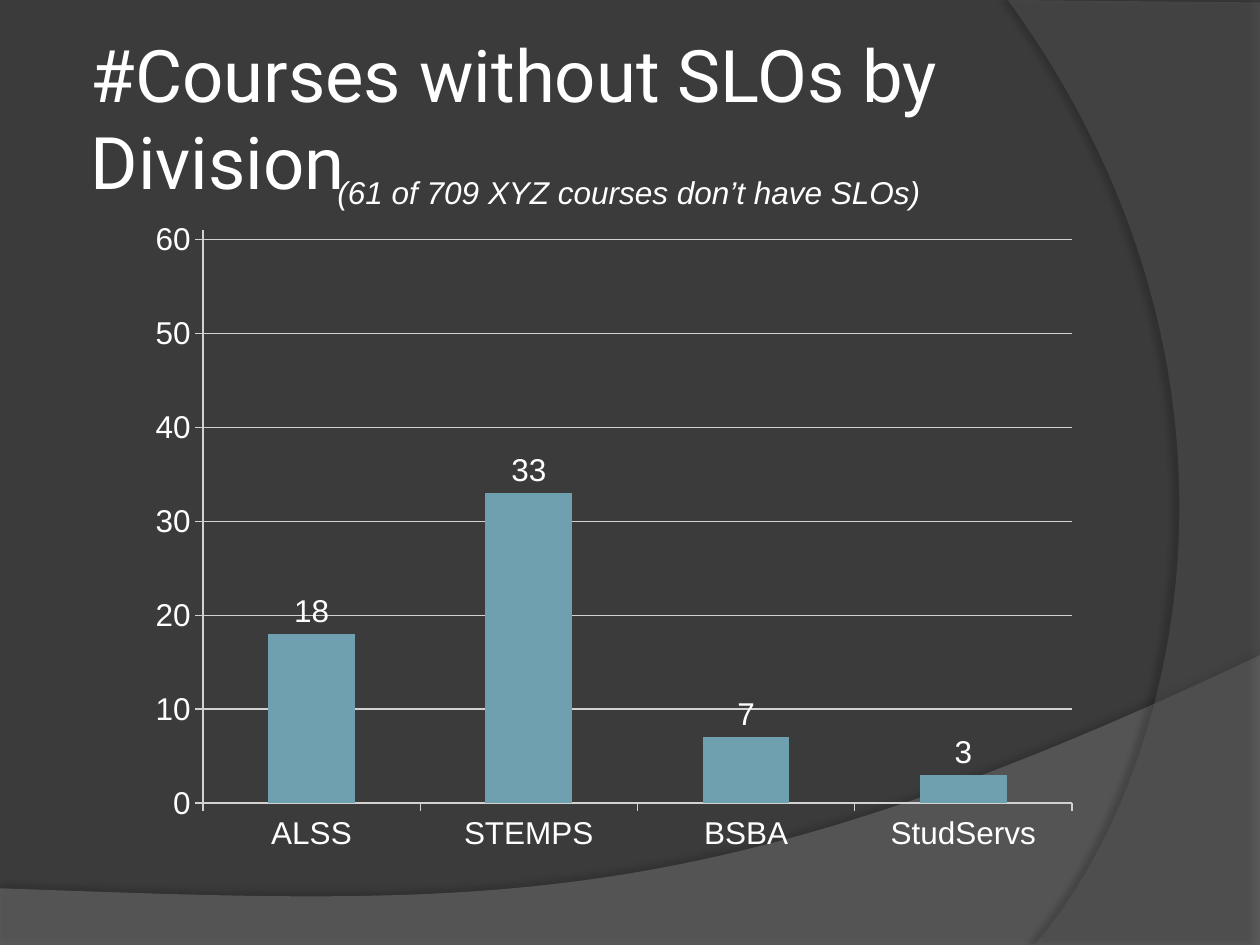
from lxml import etree
from pptx import Presentation
from pptx import util as u
from pptx.chart import data as chart_data
from pptx.dml.color import RGBColor
from pptx.enum import chart as charts, text
from pptx.oxml.ns import qn

WIDTH, HEIGHT = 10, 7.5
WHITE, LINE_GREY, TEAL = "FFFFFF", "D2D2D2", "6EA0B0"


def colour(code):
    return RGBColor.from_string(code)


def share_box(left, top, width, height):
    """Turn shares of the slide's size into a box of lengths."""
    return (u.Inches(left * WIDTH), u.Inches(top * HEIGHT),
            u.Inches(width * WIDTH), u.Inches(height * HEIGHT))


def set_values(target, values):
    for name, value in values.items():
        setattr(target, name, value)


def set_font(font, values, code=WHITE):
    set_values(font, values)
    font.color.rgb = colour(code)


def child(parent, tag, **values):
    return etree.SubElement(parent, qn(tag), values)


def bezier(points, steps=60):
    """Sample a cubic curve, leaving out its first point."""
    for step in range(1, steps + 1):
        t = step / steps
        weights = ((1 - t) ** 3, 3 * t * (1 - t) ** 2, 3 * t * t * (1 - t), t ** 3)
        yield tuple(sum(w * p[axis] for w, p in zip(weights, points)) for axis in (0, 1))


def add_swoosh(page, corners, curve, fill, opacity, shadow):
    """Draw a translucent band: straight corners, then one curved side."""
    outline = [*corners, *bezier([corners[-1], *curve])]
    (start, *rest) = [(u.Inches(x), u.Inches(y)) for x, y in outline]
    builder = page.shapes.build_freeform(*start, scale=1.0)
    builder.add_line_segments(rest, close=True)
    band = builder.convert_to_shape()
    band.fill.solid()
    band.fill.fore_color.rgb = colour(fill)
    band.line.fill.background()
    props = band.fill._xPr
    child(props.find(".//" + qn("a:srgbClr")), "a:alpha", val=str(opacity * 1000))
    # Soft shadow along the curved edge
    strength, blur, distance, angle = shadow
    effects = child(props, "a:effectLst")
    outer = child(effects, "a:outerShdw", blurRad=str(u.Pt(blur)), dist=str(u.Pt(distance)),
                  dir=str(angle * 60000), algn="ctr", rotWithShape="0")
    black = child(outer, "a:srgbClr", val="000000")
    child(black, "a:alpha", val=str(strength * 1000))


def add_background(page):
    page.background.fill.solid()
    page.background.fill.fore_color.rgb = colour("3B3B3B")
    add_swoosh(page, [(0, 7.05), (0, 7.51), (10, 7.51), (10, 5.2)],
               [(5.59, 7.29), (3.91, 7.19), (0, 7.05)], "7F7F7F", 45, (35, 4, 3.5, 270))
    add_swoosh(page, [(10, 0.02), (10, 7.5), (8.21, 7.5)],
               [(9.35, 6.19), (10.18, 3), (8, 0)], "5E5E5E", 40, (45, 4, 4, 180))


def add_text(page, box, words, font, frame):
    area = page.shapes.add_textbox(*box).text_frame
    set_values(area, {"word_wrap": True, **frame})
    span = area.paragraphs[0].add_run()
    span.text = words
    set_font(span.font, font)


def style_line(line):
    line.color.rgb = colour(LINE_GREY)
    line.width = u.Pt(0.75)


def set_plot_area(chart, **shares):
    """Fix the inner plot area as shares of the chart."""
    plot_area = chart._chartSpace.find(".//" + qn("c:plotArea"))
    layout = plot_area.find(qn("c:layout"))
    if layout is None:
        layout = etree.Element(qn("c:layout"))
        plot_area.insert(0, layout)
    manual = child(layout, "c:manualLayout")
    child(manual, "c:layoutTarget", val="inner")
    for name in ("xMode", "yMode"):
        child(manual, "c:" + name, val="edge")
    for name, value in shares.items():
        child(manual, "c:" + name, val=str(value))


def add_division_chart(page, box):
    counts = chart_data.CategoryChartData()
    counts.categories = ["ALSS", "STEMPS", "BSBA", "StudServs"]
    counts.add_series("Series 1", [18, 33, 7, 3])
    chart = page.shapes.add_chart(charts.XL_CHART_TYPE.COLUMN_CLUSTERED, *box, counts).chart
    set_values(chart, {"has_legend": False, "has_title": False})
    font = {"name": "Arial", "size": u.Pt(18)}
    set_font(chart.font, font)
    set_plot_area(chart, x=0.07, y=0.03, w=0.91, h=0.88)

    # Axes and gridlines
    for axis in (chart.category_axis, chart.value_axis):
        axis.major_tick_mark = charts.XL_TICK_MARK.OUTSIDE
        style_line(axis.format.line)
    set_values(chart.value_axis, {"minimum_scale": 0, "maximum_scale": 61,
                                  "major_unit": 10, "has_major_gridlines": True})
    style_line(chart.value_axis.major_gridlines.format.line)

    # Columns and their values
    plot = chart.plots[0]
    set_values(plot, {"gap_width": 150, "vary_by_categories": False, "has_data_labels": True})
    set_values(plot.data_labels, {"show_value": True,
                                  "position": charts.XL_LABEL_POSITION.OUTSIDE_END})
    set_font(plot.data_labels.font, font)
    fill = plot.series[0].format.fill
    fill.solid()
    fill.fore_color.rgb = colour(TEAL)


def main():
    deck = Presentation()
    set_values(deck, {"slide_width": u.Inches(WIDTH), "slide_height": u.Inches(HEIGHT)})
    page = deck.slides.add_slide(deck.slide_layouts[6])
    add_background(page)

    # Title
    sides = ("left", "top", "right", "bottom")
    frame = {f"margin_{side}": u.Inches(0.05) for side in sides}
    add_text(page, share_box(0.067, 0.04, 0.85, 0.167), "#Courses without SLOs by Division",
             {"name": "Roboto", "size": u.Pt(41.4)},
             {**frame, "vertical_anchor": text.MSO_ANCHOR.MIDDLE})

    add_division_chart(page, share_box(0.108, 0.223, 0.758, 0.689))

    # Subtitle
    add_text(page, share_box(0.258, 0.177, 0.492, 0.053),
             "(61 of 709 XYZ courses don’t have SLOs)",
             {"name": "Arial", "size": u.Pt(18), "italic": True},
             {"auto_size": text.MSO_AUTO_SIZE.SHAPE_TO_FIT_TEXT})
    deck.save("out.pptx")


if __name__ == "__main__":
    main()
